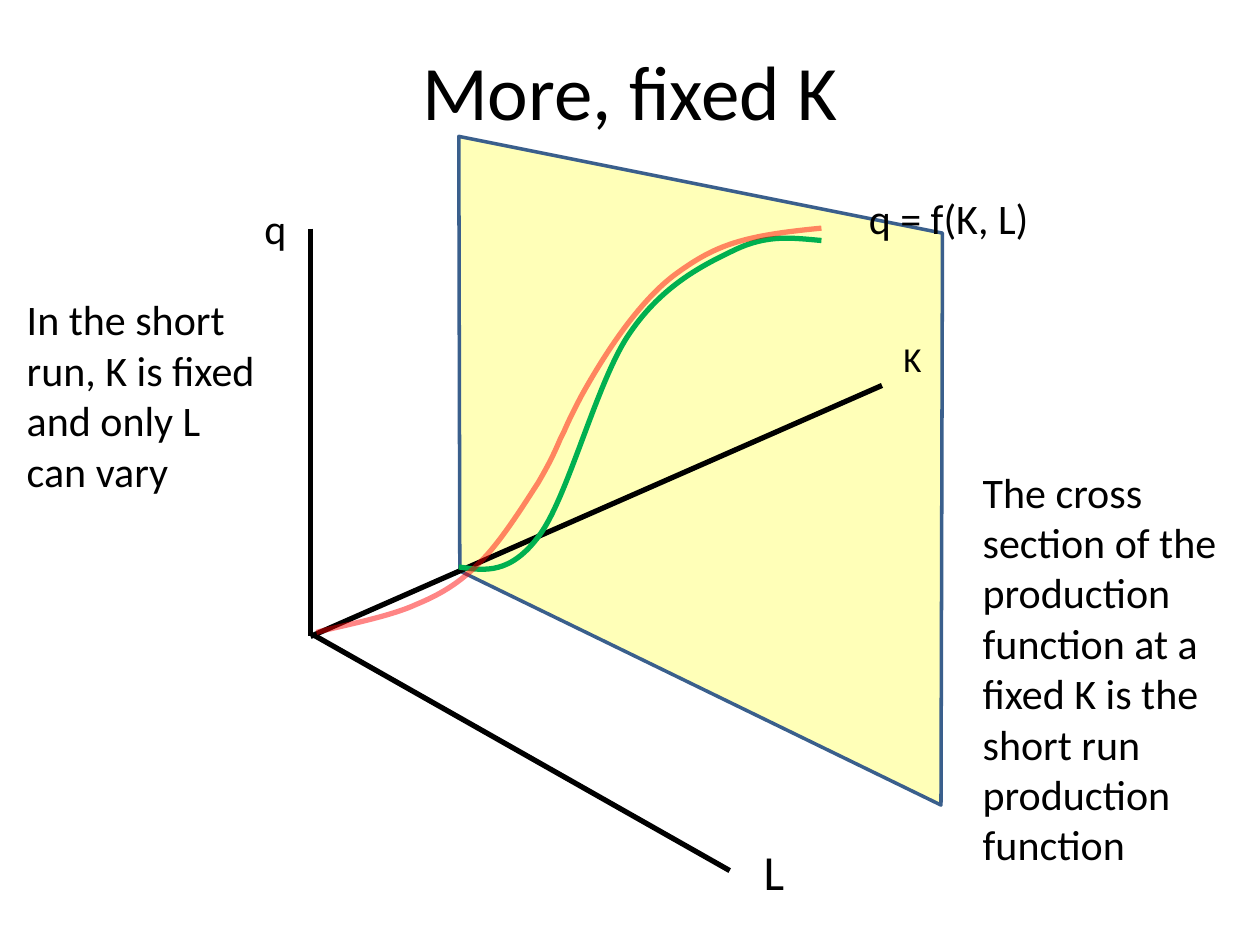
"""Builds the slide on the short run production function at a fixed K."""
from dataclasses import dataclass

from lxml import etree
from pptx import Presentation
from pptx import util as u
from pptx.dml.color import RGBColor
from pptx.enum import shapes, text
from pptx.oxml.ns import qn


@dataclass(frozen=True)
class Theme:
    font: str = "Calibri"
    ink: str = "000000"
    plane: str = "FFFF00"
    edge: str = "3A5F8C"
    section: str = "00B050"
    surface: str = "FF0000"
    title: int = 44
    large: int = 28
    body: int = 24
    small: int = 20
    thin: int = 2
    thick: int = 3


def paint(fill, color, opacity=100):
    fill.solid()
    fill.fore_color.rgb = RGBColor.from_string(color)
    if opacity < 100:
        clr = fill._xPr.find(qn("a:solidFill"))[0]
        etree.SubElement(clr, qn("a:alpha"), val=str(opacity * 1000))


def write(tf, content, *, theme, size, align):
    p = tf.paragraphs[0]
    p.alignment = align
    r = p.add_run()
    r.text = content
    r.font.name = theme.font
    r.font.size = u.Pt(size)
    r.font.color.rgb = RGBColor.from_string(theme.ink)


class Canvas:
    def __init__(self, s, theme):
        self.s = s
        self.theme = theme

    def textbox(self, content, x, y, w, h, size, wrap, align):
        sp = self.s.shapes.add_textbox(u.Cm(x), u.Cm(y), u.Cm(w), u.Cm(h))
        tf = sp.text_frame
        tf.word_wrap = wrap
        tf.auto_size = text.MSO_AUTO_SIZE.SHAPE_TO_FIT_TEXT
        write(tf, content, theme=self.theme, size=size, align=align)
        return tf

    def title(self, content, *box):
        tf = self.textbox(content, *box, self.theme.title, True, text.PP_ALIGN.CENTER)
        tf.auto_size = text.MSO_AUTO_SIZE.NONE
        tf.vertical_anchor = text.MSO_ANCHOR.MIDDLE

    def label(self, content, *box, size):
        self.textbox(content, *box, size, False, text.PP_ALIGN.CENTER)

    def note(self, content, *box):
        self.textbox(content, *box, self.theme.body, True, text.PP_ALIGN.LEFT)

    def axis(self, x1, y1, x2, y2):
        ln = self.s.shapes.add_connector(
            shapes.MSO_CONNECTOR.STRAIGHT, u.Cm(x1), u.Cm(y1), u.Cm(x2), u.Cm(y2))
        paint(ln.line.fill, self.theme.ink)
        ln.line.width = u.Pt(self.theme.thick)
        etree.SubElement(ln._element.spPr, qn("a:effectLst"))

    def outline(self, points, color, width, close=False, opacity=100):
        pts = [(u.Cm(x), u.Cm(y)) for x, y in points]
        fb = self.s.shapes.build_freeform(*pts[0])
        fb.add_line_segments(pts[1:], close=close)
        sp = fb.convert_to_shape()
        sp.shadow.inherit = False
        sp.fill.background()
        paint(sp.line.fill, color, opacity)
        sp.line.width = u.Pt(width)
        return sp

    def plane(self, points):
        sp = self.outline(points, self.theme.edge, self.theme.thin, close=True)
        paint(sp.fill, self.theme.plane, 28)

    def curve(self, points, color, opacity=100):
        sp = self.outline(points, color, self.theme.thick, opacity=opacity)
        lines = list(sp._element.iter(qn("a:lnTo")))
        for i in range(0, len(lines), 3):
            bez = etree.SubElement(lines[i].getparent(), qn("a:cubicBezTo"))
            for ln in lines[i:i + 3]:
                bez.append(ln[0])
                ln.getparent().remove(ln)


def main():
    theme = Theme()
    prs = Presentation()
    prs.slide_width, prs.slide_height = u.Cm(25.4), u.Cm(19.05)
    c = Canvas(prs.slides.add_slide(prs.slide_layouts[6]), theme)

    c.plane([(9.25, 2.75), (19, 4.7), (18.97, 16.23), (9.27, 11.51)])
    c.title("More, fixed K", 1.27, 0.46, 22.86, 2.69)

    c.axis(6.26, 4.61, 6.26, 12.83)
    c.axis(17.78, 7.77, 6.26, 12.83)
    c.axis(6.32, 12.8, 14.71, 17.55)

    c.label("K", 17.95, 6.68, 0.89, 1.12, size=theme.small)
    c.label("L", 15.13, 16.84, 0.94, 1.45, size=theme.large)
    c.label("q", 5.08, 3.95, 0.94, 1.27, size=theme.body)
    c.label("q = f(K, L)", 16.99, 3.76, 4.27, 1.27, size=theme.body)

    c.note("In the short run, K is fixed and only L can vary", 0.29, 5.8, 5.26, 4.37)
    c.note("The cross section of the production function at a fixed K "
           "is the short run production function", 19.56, 9.27, 5.56, 8.46)

    c.curve([
        (9.25, 11.43),
        (9.78, 11.51), (10.29, 11.58), (10.87, 10.8),
        (11.46, 10.01), (12.04, 7.65), (12.7, 6.71),
        (13.36, 5.74), (14.2, 5.33), (14.83, 5.03),
        (15.49, 4.72), (15.98, 4.8), (16.56, 4.85),
    ], theme.section)
    c.curve([
        (6.38, 12.75),
        (6.71, 12.65), (7.82, 12.45), (8.38, 12.19),
        (8.94, 11.96), (9.32, 11.71), (9.73, 11.28),
        (10.13, 10.87), (10.59, 10.13), (10.85, 9.73),
        (11.1, 9.3), (11.18, 9.12), (11.3, 8.84),
        (11.46, 8.53), (11.33, 8.74), (11.71, 8),
        (12.12, 7.26), (12.85, 6.07), (13.67, 5.49),
        (14.45, 4.93), (14.99, 4.75), (16.56, 4.6),
    ], theme.surface, opacity=48)

    prs.save("out.pptx")


if __name__ == "__main__":
    main()
